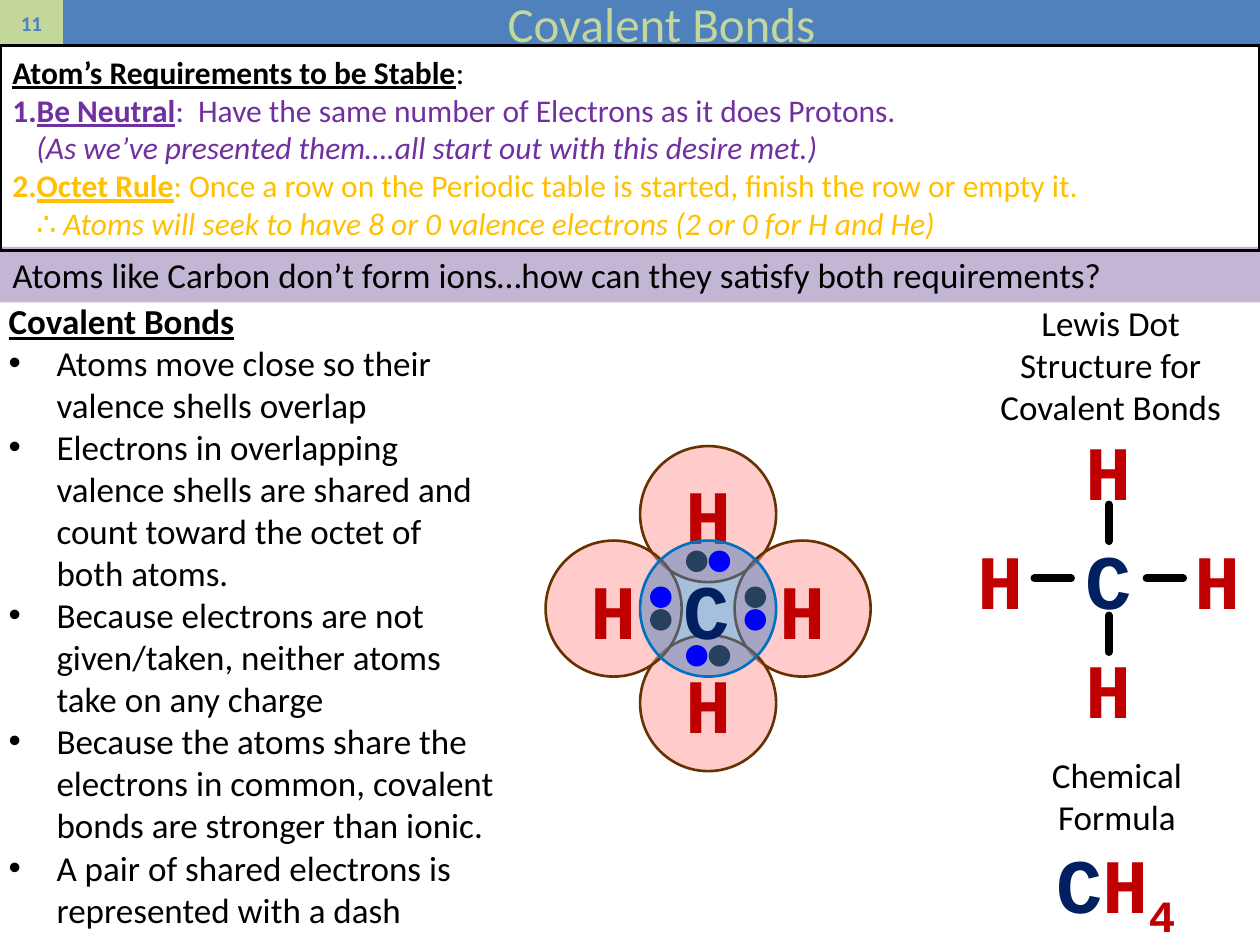
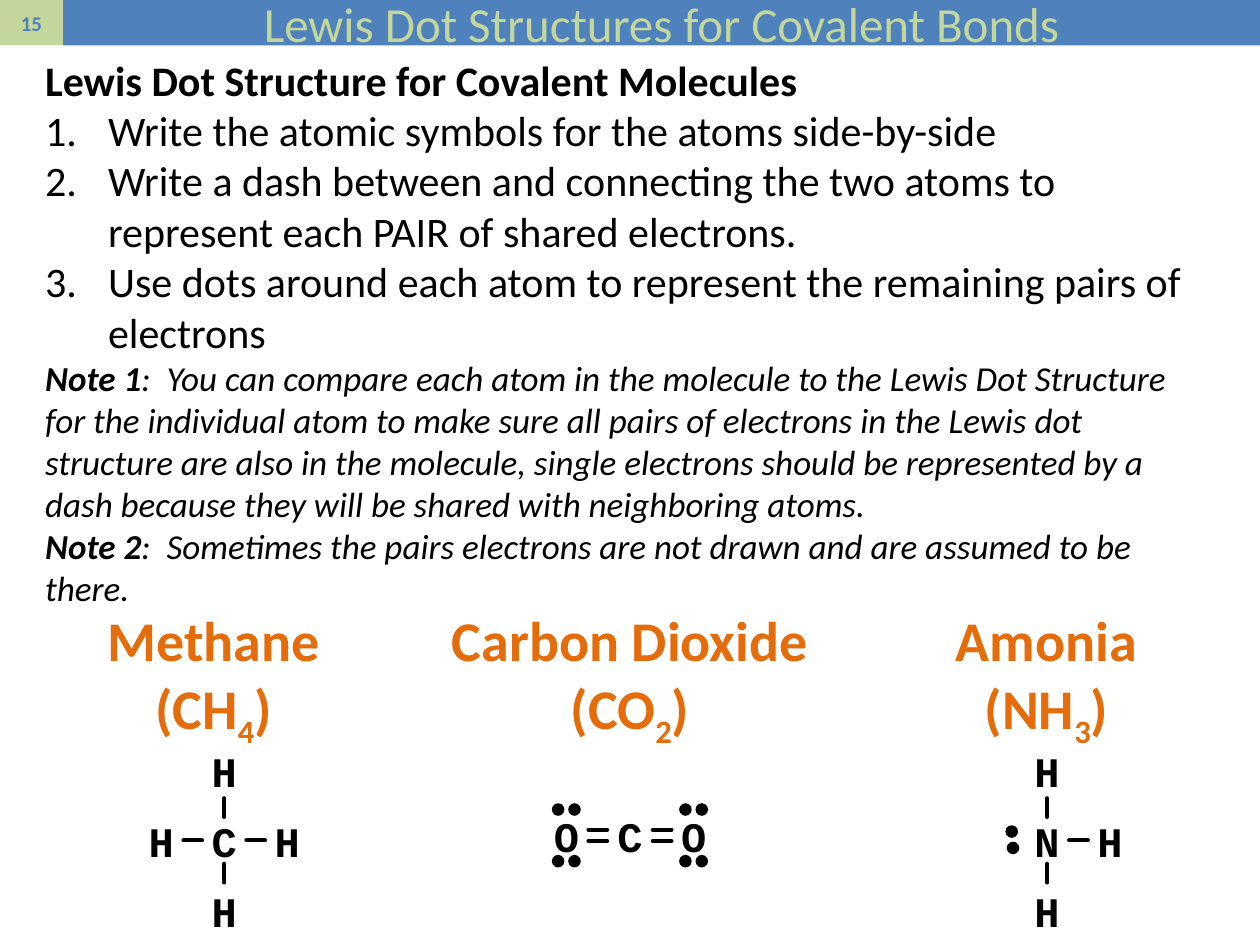
"""Build two slides on covalent bonds and their Lewis dot structures."""
from dataclasses import dataclass, replace
from typing import Optional

from lxml import etree
from pptx import Presentation
from pptx.dml.color import RGBColor
from pptx.enum.shapes import MSO_CONNECTOR, MSO_SHAPE
from pptx.enum.text import MSO_ANCHOR, MSO_AUTO_SIZE, PP_ALIGN
from pptx.oxml.ns import qn
from pptx.util import Inches, Pt

RECT, OVAL = MSO_SHAPE.RECTANGLE, MSO_SHAPE.OVAL
LINE = MSO_CONNECTOR.STRAIGHT
TOP, MIDDLE = MSO_ANCHOR.TOP, MSO_ANCHOR.MIDDLE
LEFT, CENTER = PP_ALIGN.LEFT, PP_ALIGN.CENTER
FIXED = MSO_AUTO_SIZE.NONE

BLACK = RGBColor(0x00, 0x00, 0x00)
WHITE = RGBColor(0xFF, 0xFF, 0xFF)
BLUE = RGBColor(0x4F, 0x81, 0xBD)
GREEN = RGBColor(0xC3, 0xD6, 0x9B)
LILAC = RGBColor(0xC3, 0xB6, 0xD4)
PURPLE = RGBColor(0x70, 0x30, 0xA0)
GOLD = RGBColor(0xFF, 0xC0, 0x00)
ORANGE = RGBColor(0xE4, 0x6C, 0x0A)
NAVY = RGBColor(0x00, 0x20, 0x60)
RED = RGBColor(0xC0, 0x00, 0x00)
PINK = RGBColor(0xFF, 0x99, 0x99)
BROWN = RGBColor(0x66, 0x33, 0x00)
AZURE = RGBColor(0x00, 0x70, 0xC0)
BRIGHT = RGBColor(0x00, 0x00, 0xFF)

SANS, MONO = "Calibri", "Courier New"
NORTH, EAST, SOUTH, WEST = (0, -1), (1, 0), (0, 1), (-1, 0)
SIDES = (NORTH, EAST, SOUTH, WEST)


@dataclass(frozen=True)
class Run:
    """A piece of text in one style."""
    text: str
    size: float = 20
    color: RGBColor = BLACK
    bold: bool = False
    italic: bool = False
    under: bool = False
    font: str = SANS
    sub: bool = False


@dataclass(frozen=True)
class Para:
    """A paragraph, with an optional bullet sign or number."""
    runs: tuple[Run, ...]
    align: PP_ALIGN = LEFT
    mark: str = ""
    hang: float = 0


@dataclass(frozen=True)
class Box:
    """Left, top, width and height in inches."""
    x: float
    y: float
    w: float
    h: float

    def emu(self) -> tuple:
        """Return the four lengths for python-pptx."""
        return tuple(Inches(v) for v in (self.x, self.y, self.w, self.h))


@dataclass(frozen=True)
class Look:
    """Measures of a structure: letter steps, dash places and sizes."""
    across: float
    down: float
    dash_x: float
    dash_y: float
    half: float
    size: float
    width: float
    core: RGBColor = BLACK
    arm: RGBColor = BLACK


LARGE = Look(0.86, 0.865, 0.445, 0.44, 0.145, 44, 4.5, NAVY, RED)
SMALL = Look(0.5, 0.555, 0.25, 0.26, 0.075, 24, 2.25)


def around(x: float, y: float, w: float, h: float) -> Box:
    """Make a box from its centre."""
    return Box(x - w / 2, y - h / 2, w, h)


def write(frame, paras: list[Para], anchor: MSO_ANCHOR = TOP,
          wrap: bool = True) -> None:
    """Fill a text frame run by run."""
    frame.word_wrap = wrap
    frame.auto_size = FIXED
    frame.vertical_anchor = anchor
    for i, item in enumerate(paras):
        para = frame.add_paragraph() if i else frame.paragraphs[0]
        para.alignment = item.align
        if item.mark:
            props = para._p.get_or_add_pPr()
            props.set("marL", str(Inches(item.hang)))
            props.set("indent", str(-Inches(item.hang)))
            if item.mark == "1.":
                etree.SubElement(props, qn("a:buAutoNum"), type="arabicPeriod")
            else:
                etree.SubElement(props, qn("a:buFont"), typeface="Arial")
                etree.SubElement(props, qn("a:buChar"), char=item.mark)
        for part in item.runs:
            for j, text in enumerate(part.text.split("\n")):
                if j:
                    para.add_line_break()
                run = para.add_run()
                run.text = text
                font = run.font
                font.name, font.size = part.font, Pt(part.size)
                font.bold, font.italic = part.bold, part.italic
                font.underline = part.under
                font.color.rgb = part.color
                if part.sub:
                    run._r.get_or_add_rPr().set("baseline", "-25000")


def label(slide, box: Box, paras: list[Para], anchor: MSO_ANCHOR = TOP,
          wrap: bool = True) -> None:
    """Add a text box."""
    write(slide.shapes.add_textbox(*box.emu()).text_frame, paras, anchor, wrap)


def shape(slide, kind: MSO_SHAPE, box: Box, fill: Optional[RGBColor] = None,
          edge: Optional[RGBColor] = None, width: float = 1.5,
          clear: bool = False):
    """Add a preset shape, half transparent if clear."""
    item = slide.shapes.add_shape(kind, *box.emu())
    item.shadow.inherit = False
    if fill is None:
        item.fill.background()
    else:
        item.fill.solid()
        item.fill.fore_color.rgb = fill
    if clear:
        tone = item._element.spPr.find(".//" + qn("a:srgbClr"))
        etree.SubElement(tone, qn("a:alpha"), val="50000")
    if edge is None:
        item.line.fill.background()
    else:
        item.line.color.rgb = edge
        item.line.width = Pt(width)
    return item


def dot(slide, x: float, y: float, size: float, color: RGBColor = BLACK) -> None:
    """Add an electron."""
    shape(slide, OVAL, around(x, y, size, size), color)


def dash(slide, x: float, y: float, side: tuple, look: Look) -> None:
    """Add a bond centred on a point and running along a side."""
    dx, dy = side[0] * look.half, side[1] * look.half
    ends = (x - dx, y - dy, x + dx, y + dy)
    line = slide.shapes.add_connector(LINE, *(Inches(v) for v in ends))
    line.line.color.rgb = BLACK
    line.line.width = Pt(look.width)
    line.line._get_or_add_ln().set("cap", "rnd")
    etree.SubElement(line._element.spPr, qn("a:effectLst"))


def atom(slide, text: str, x: float, y: float, size: float,
         color: RGBColor) -> None:
    """Add an atomic symbol centred on a point."""
    run = Run(text, size, color, bold=True, font=MONO)
    label(slide, around(x, y, 0.65, 0.6), [Para((run,), CENTER)], MIDDLE, False)


def bonds(slide, x: float, y: float, core: str, sides: tuple, look: Look) -> None:
    """Draw a central atom with a hydrogen on each side."""
    atom(slide, core, x, y, look.size, look.core)
    for side in sides:
        dx, dy = side
        atom(slide, "H", x + dx * look.across, y + dy * look.down,
             look.size, look.arm)
        dash(slide, x + dx * look.dash_x, y + dy * look.dash_y, side, look)


def shells(slide, x: float, y: float) -> None:
    """Draw overlapping valence shells of methane."""
    step, wide, gap, size = 0.75, 1.08, 0.09, 0.17
    shape(slide, RECT, around(x, y, 3.95, 3.95), WHITE)
    for dx, dy in SIDES:
        cx, cy = x + dx * step, y + dy * step
        shape(slide, OVAL, around(cx, cy, wide, wide), PINK, BROWN, clear=True)
        atom(slide, "H", cx, cy, 44, RED)
        dot(slide, x + dx * step / 2 + dy * gap,
            y + dy * step / 2 - dx * gap, size)
    shape(slide, OVAL, around(x, y, wide, wide), BLUE, AZURE, clear=True)
    atom(slide, "C", x - 0.01, y, 44, NAVY)
    for dx, dy in SIDES:
        dot(slide, x + dx * step / 2 - dy * gap,
            y + dy * step / 2 + dx * gap, size, BRIGHT)


def start(deck, title: str, number: str):
    """Add a slide with its title band and number."""
    slide = deck.slides.add_slide(deck.slide_layouts[5])
    badge = shape(slide, RECT, Box(0, 0, 0.5, 0.36), GREEN)
    write(badge.text_frame, [Para((Run(number, 12, BLUE, True),), CENTER)], MIDDLE)
    head = slide.shapes.title
    head.left, head.top, head.width, head.height = Box(0.5, 0, 9.5, 0.36).emu()
    head.fill.solid()
    head.fill.fore_color.rgb = BLUE
    write(head.text_frame, [Para((Run(title, 28, GREEN),), CENTER)], MIDDLE)
    return slide


def rule(name: str, text: str, more: str, color: RGBColor) -> Para:
    """Make a numbered rule with an italic remark."""
    base = Run(text, 18, color)
    return Para((replace(base, text=name, bold=True, under=True), base,
                 replace(base, text=more, italic=True)), mark="1.", hang=0.19)


def note(name: str, text: str) -> Para:
    """Make an italic note with a bold name."""
    return Para((Run(name, bold=True, italic=True), Run(text, italic=True)))


def covalent(deck) -> None:
    """Build the slide on covalent bonds."""
    slide = start(deck, "Covalent Bonds", "11")
    banner = shape(slide, RECT, Box(0, 1.96, 10, 0.44), LILAC)
    write(banner.text_frame, [Para((Run(
        "Atoms like Carbon don’t form ions…how can they satisfy both requirements?"),))])
    label(slide, Box(0, 0.37, 9.37, 1.62), [
        Para((Run("Atom’s Requirements to be Stable", 18, bold=True, under=True),
              Run(":", 18))),
        rule("Be Neutral", ":  Have the same number of Electrons as it does Protons.\n",
             "(As we’ve presented them….all start out with this desire met.)", PURPLE),
        rule("Octet Rule", ": Once a row on the Periodic table is started, "
             "finish the row or empty it.\n∴ ",
             "Atoms will seek to have 8 or 0 valence electrons (2 or 0 for H and He)",
             GOLD)])
    shape(slide, RECT, Box(0, 0.36, 10, 1.63), edge=BLACK, width=2)
    bonds(slide, 8.8, 4.59, "C", SIDES, LARGE)
    shells(slide, 5.62, 4.83)
    points = (
        "Atoms move close so their valence shells overlap",
        "Electrons in overlapping valence shells are shared and count toward "
        "the octet of both atoms.",
        "Because electrons are not given/taken, neither atoms take on any charge",
        "Because the atoms share the electrons in common, covalent bonds are "
        "stronger than ionic.",
        "A pair of shared electrons is represented with a dash")
    label(slide, Box(-0.03, 2.33, 4.05, 5.15),
          [Para((Run("Covalent Bonds", bold=True, under=True),))]
          + [Para((Run(text),), mark="•", hang=0.38) for text in points])
    for box, text in ((Box(7.8, 2.34, 2.03, 1.11),
                       "Lewis Dot Structure for Covalent Bonds"),
                      (Box(7.85, 5.93, 2.03, 0.77), "Chemical Formula")):
        label(slide, box, [Para((Run(text),), CENTER)])
    big = Run("C", 44, NAVY, True, font=MONO)
    label(slide, Box(8.26, 6.71, 1.19, 0.69), [Para((
        big, replace(big, text="H", color=RED),
        replace(big, text="4", color=RED, sub=True)), CENTER)], MIDDLE, False)


def lewis(deck) -> None:
    """Build the slide on Lewis dot structures."""
    slide = start(deck, "Lewis Dot Structures for Covalent Bonds", "15")
    steps = (
        "Write the atomic symbols for the atoms side-by-side",
        "Write a dash between and connecting the two atoms to represent each "
        "PAIR of shared electrons.",
        "Use dots around each atom to represent the remaining pairs of electrons")
    label(slide, Box(0.26, 0.38, 9.47, 4.54), [
        Para((Run("Lewis Dot Structure for Covalent Molecules", 24, bold=True),)),
        *(Para((Run(text, 24),), mark="1.", hang=0.5) for text in steps),
        note("Note 1", ":  You can compare each atom in the molecule to the Lewis "
             "Dot Structure for the individual atom to make sure all pairs of "
             "electrons in the Lewis dot structure are also in the molecule, single "
             "electrons should be represented by a dash because they will be shared "
             "with neighboring atoms."),
        note("Note 2", ":  Sometimes the pairs electrons are not drawn and are "
             "assumed to be there.")])
    names = (("Methane", "(CH", "4"), ("Carbon Dioxide", "(CO", "2"),
             ("Amonia", "(NH", "3"))
    for i, (name, stem, count) in enumerate(names):
        base = Run(name, 32, ORANGE, True)
        label(slide, Box(3.305 * i, 4.76, 3.39, 1.18), [
            Para((base,), CENTER),
            Para((replace(base, text=stem), replace(base, text=count, sub=True),
                  replace(base, text=")")), CENTER)])
    bonds(slide, 1.78, 6.67, "C", SIDES, SMALL)
    bonds(slide, 8.31, 6.67, "N", (NORTH, EAST, SOUTH), SMALL)
    for x, y in ((8.03, 6.6), (8.04, 6.73)):
        dot(slide, x, y, 0.1)
    mid, row = 5, 6.63
    atom(slide, "C", mid, row, 24, BLACK)
    for way in (-1, 1):
        far = mid + way * 0.505
        atom(slide, "O", far, row, 24, BLACK)
        for sign in (-1, 1):
            dash(slide, mid + way * 0.255, row + sign * 0.045, EAST, SMALL)
            for turn in (-1, 1):
                dot(slide, far + turn * 0.065, row + sign * 0.205, 0.1)


def main() -> None:
    """Build and save the slides."""
    deck = Presentation()
    deck.slide_width, deck.slide_height = Inches(10), Inches(7.5)
    covalent(deck)
    lewis(deck)
    deck.save("out.pptx")


if __name__ == "__main__":
    main()
